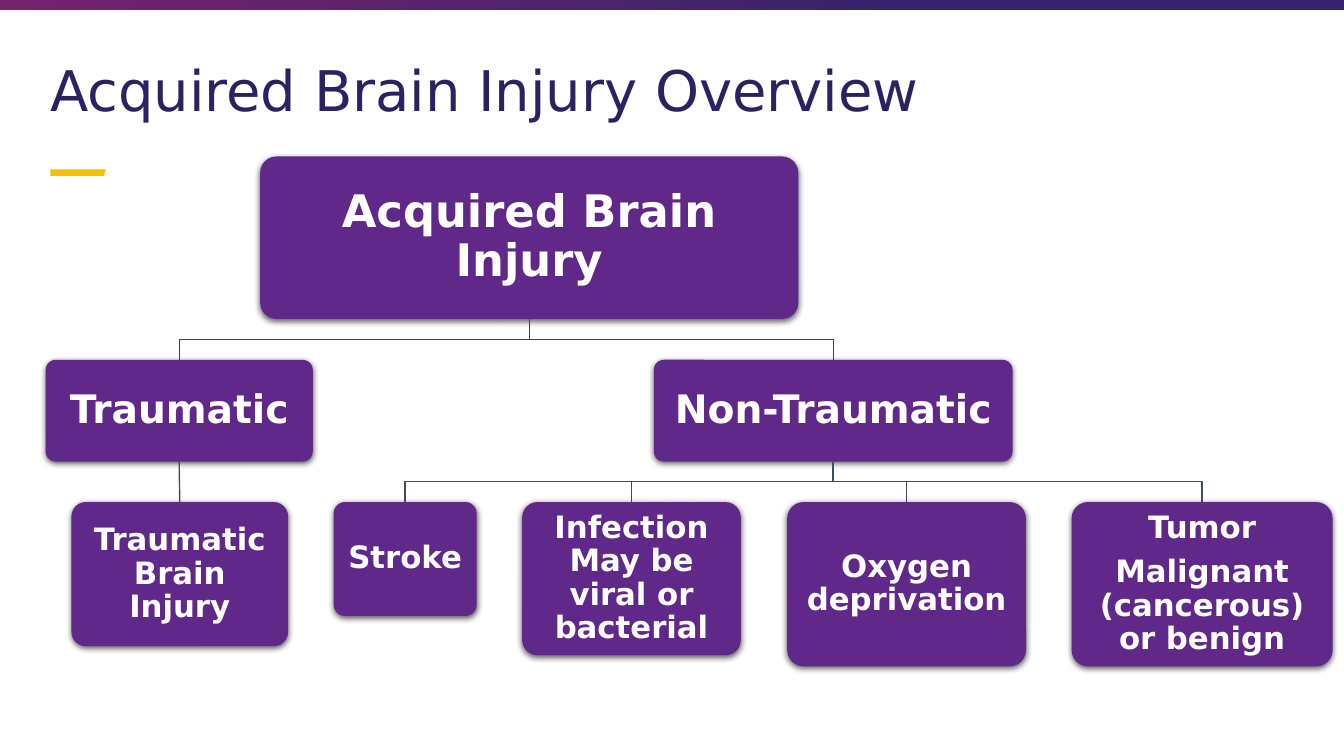
from pptx import Presentation
from pptx.dml.color import RGBColor
from pptx.enum.shapes import MSO_CONNECTOR, MSO_SHAPE
from pptx.enum.text import MSO_ANCHOR, PP_ALIGN
from pptx.oxml import parse_xml
from pptx.oxml.ns import nsdecls, qn
from pptx.util import Pt

RECT, ROUNDED = MSO_SHAPE.RECTANGLE, MSO_SHAPE.ROUNDED_RECTANGLE
STRAIGHT = MSO_CONNECTOR.STRAIGHT
TOP, MIDDLE = MSO_ANCHOR.TOP, MSO_ANCHOR.MIDDLE
LEFT, CENTER = PP_ALIGN.LEFT, PP_ALIGN.CENTER
TOP_SIDE, BOTTOM_SIDE = 0, 2

SHADOW = (
    f'<a:effectLst {nsdecls("a")}><a:outerShdw blurRad="57150" dist="19050" '
    'dir="5400000" algn="ctr" rotWithShape="0"><a:srgbClr val="000000">'
    '<a:alpha val="63000"/></a:srgbClr></a:outerShdw></a:effectLst>'
)

BRANCH_TOP, LEAF_TOP = 257, 358.6
BRANCH_HEIGHT = 72.7
BRANCH_LINE, LEAF_LINE = "364355", "3E4C60"
# Each branch: text, left, width, leaves (paragraphs, left, width, height)
BRANCHES = [
    ("Traumatic", 32.6, 190.8, [
        (["Traumatic Brain Injury"], 51, 154.8, 103),
    ]),
    ("Non-Traumatic", 467, 256.3, [
        (["Stroke"], 238.3, 102.2, 81.4),
        (["Infection May be viral or bacterial"], 373, 156.2, 109.4),
        (["Oxygen deprivation"], 562.3, 170.6, 117.4),
        (["Tumor", "Malignant (cancerous) or benign"], 765.4, 186.5, 117.4),
    ]),
]


def color(value):
    return RGBColor.from_string(value)


def set_all(target, values):
    for name, value in values.items():
        setattr(target, name, value)


class Chart:
    """Draws the elements of the hierarchy on one slide."""

    font = "DejaVu Sans"
    box_fill = "5F2889"

    def __init__(self, page):
        self.page = page

    def fill_text(self, frame, paragraphs, size, ink, bold, align, after):
        frame.word_wrap = True
        for index, text in enumerate(paragraphs):
            para = frame.add_paragraph() if index else frame.paragraphs[0]
            set_all(para, {"alignment": align, "line_spacing": 0.9,
                           "space_after": Pt(after)})
            span = para.add_run()
            span.text = text
            set_all(span.font, {"name": self.font, "size": Pt(size), "bold": bold})
            span.font.color.rgb = color(ink)

    def title(self, text, left, top, width, height):
        box = self.page.shapes.add_textbox(Pt(left), Pt(top), Pt(width), Pt(height))
        box.text_frame.vertical_anchor = TOP
        self.fill_text(box.text_frame, [text], 40, "2E2161", False, LEFT, 0)

    def gradient_band(self, left, top, width, height, stops):
        band = self.page.shapes.add_shape(RECT, Pt(left), Pt(top), Pt(width), Pt(height))
        band.rotation = 180
        band.shadow.inherit = False
        band.line.fill.background()
        band.fill.gradient()
        band.fill.gradient_angle = 0
        for stop, (position, value) in zip(band.fill.gradient_stops, stops):
            stop.position = position
            stop.color.rgb = color(value)

    def box(self, paragraphs, left, top, width, height, size):
        box = self.page.shapes.add_shape(ROUNDED, Pt(left), Pt(top), Pt(width), Pt(height))
        box.adjustments[0] = 0.1
        box.fill.solid()
        box.fill.fore_color.rgb = color(self.box_fill)
        box.line.fill.background()
        box._element.spPr.append(parse_xml(SHADOW))
        frame = box.text_frame
        inset = Pt(size * 0.3)
        set_all(frame, {"margin_left": inset, "margin_right": inset, "margin_top": inset,
                        "margin_bottom": inset, "vertical_anchor": MIDDLE})
        self.fill_text(frame, paragraphs, size, "FFFFFF", True, CENTER, size * 0.35)
        return box

    def outline(self, points, close):
        start, *rest = points
        builder = self.page.shapes.build_freeform(*start)
        builder.add_line_segments(rest, close=close)
        shape = builder.convert_to_shape()
        shape.shadow.inherit = False
        return shape

    def accent(self, points, value):
        shape = self.outline([(Pt(x), Pt(y)) for x, y in points], True)
        shape.fill.solid()
        shape.fill.fore_color.rgb = color(value)
        shape.line.fill.background()

    def link(self, parent, child, value):
        """Join parent to child: straight when aligned, otherwise with two bends."""
        start_x, end_x = (box.left + box.width // 2 for box in (parent, child))
        start_y, end_y = parent.top + parent.height, child.top
        if abs(start_x - end_x) < Pt(1):
            line = self.page.shapes.add_connector(STRAIGHT, start_x, start_y, end_x, end_y)
            line.begin_connect(parent, BOTTOM_SIDE)
            line.end_connect(child, TOP_SIDE)
            line._element.spPr.append(line._element.makeelement(qn("a:effectLst"), {}))
        else:
            bend_y = (start_y + end_y) // 2
            line = self.outline([(start_x, start_y), (start_x, bend_y),
                                 (end_x, bend_y), (end_x, end_y)], False)
            line.fill.background()
        line.line.color.rgb = color(value)
        line.line.width = Pt(1)


def main():
    deck = Presentation()
    set_all(deck, {"slide_width": Pt(960), "slide_height": Pt(540)})
    chart = Chart(deck.slides.add_slide(deck.slide_layouts[6]))
    chart.gradient_band(-2.2, 0, 964.8, 7.2, [(0.33, "35246C"), (1, "77236C")])
    chart.accent([(36, 121), (75.6, 121), (74.2, 125.6), (36, 125.6)], "F5C001")
    chart.title("Acquired Brain Injury Overview", 28.8, 41.8, 898.6, 68.4)

    root = chart.box(["Acquired Brain Injury"], 185.8, 111.8, 384.5, 116, 32)
    for text, left, width, leaves in BRANCHES:
        branch = chart.box([text], left, BRANCH_TOP, width, BRANCH_HEIGHT, 28)
        chart.link(root, branch, BRANCH_LINE)
        for paragraphs, leaf_left, leaf_width, leaf_height in leaves:
            leaf = chart.box(paragraphs, leaf_left, LEAF_TOP, leaf_width, leaf_height, 22)
            chart.link(branch, leaf, LEAF_LINE)
    deck.save("out.pptx")


if __name__ == "__main__":
    main()
